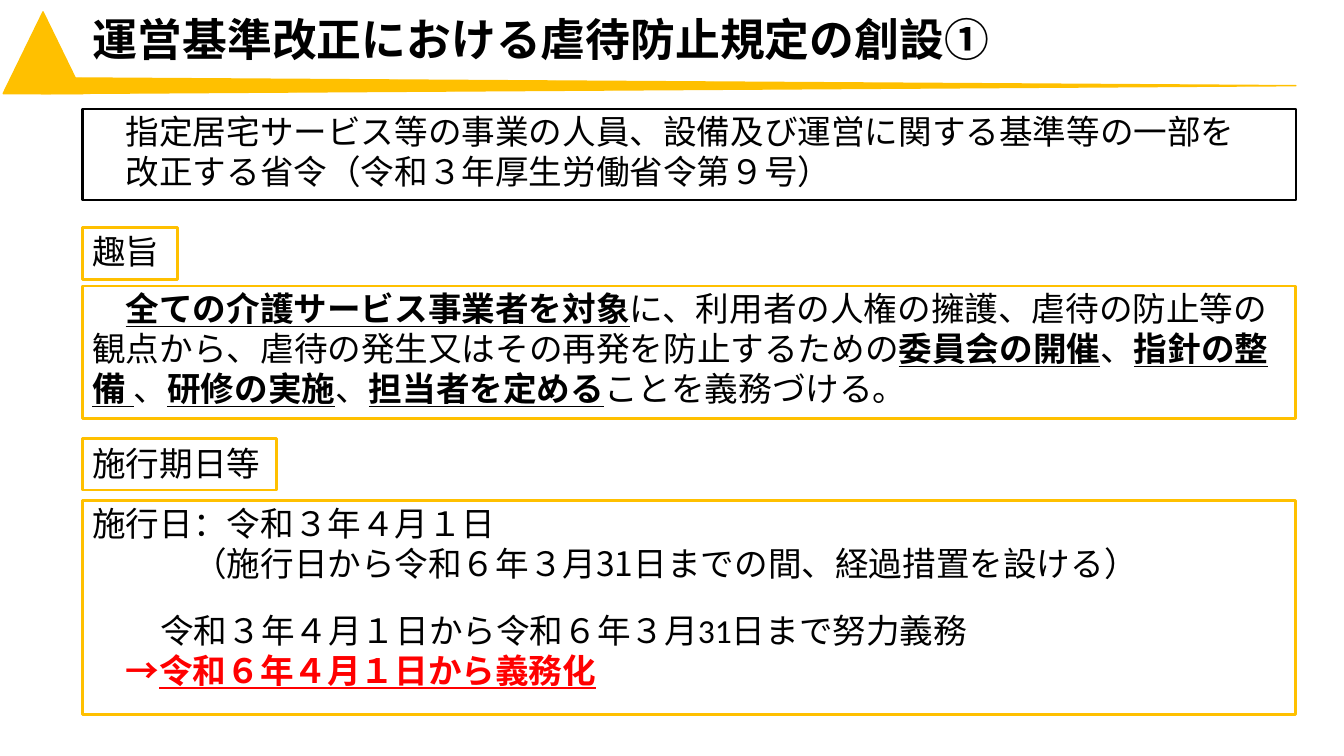
from lxml import etree
from pptx import Presentation
from pptx import util as u
from pptx.dml.color import RGBColor
from pptx.enum import shapes, text
from pptx.oxml import ns

BLACK = RGBColor(0x00, 0x00, 0x00)
RED = RGBColor(0xFF, 0x00, 0x00)
GOLD = RGBColor(0xFF, 0xC0, 0x00)
JAPANESE, LATIN = "Noto Sans CJK JP", "Calibri"

PLAIN = {}
BOLD = {"bold": True}
KEY = {"bold": True, "underline": True}
ARROW = {"bold": True, "color": RED, "font": LATIN}
DUTY = {"bold": True, "underline": True, "color": RED}

BOX_LEFT, BOX_WIDTH = 2.08, 30.58

# paragraph: (left indent cm, first-line indent cm, space before pt, runs)
TITLE = [(0.03, 0, 2, [("運営基準改正における虐待防止規定の創設①", BOLD)])]
ORDINANCE = [
    (1.09, 0, 2, [("指定居宅サービス等の事業の人員、設備及び運営に関する基準等の一部を", PLAIN)]),
    (1.09, 0, 0, [("改正する省令（令和３年厚生労働省令第９号）", PLAIN)]),
]
PURPOSE = [(0.25, 0.84, 2, [
    ("全ての介護サービス事業者を対象", KEY),
    ("に、利用者の人権の擁護、虐待の防止等の 観点から、虐待の発生又はその再発を防止するための", PLAIN),
    ("委員会の開催", KEY), ("、", PLAIN),
    ("指針の整備 ", KEY), ("、", PLAIN),
    ("研修の実施", KEY), ("、", PLAIN),
    ("担当者を定める", KEY), ("ことを義務づける。", PLAIN),
])]
SCHEDULE = [
    (0.25, 0, 2, [("施行日：令和３年４月１日", PLAIN)]),
    (2.79, 0, 0, [("（施行日から令和６年３月31日までの間、経過措置を設ける）", PLAIN)]),
    (1.96, 0, 19.3, [("令和３年４月１日から令和６年３月", PLAIN), ("31", {"font": LATIN}),
                     ("日まで努力義務", PLAIN)]),
    (1.09, 0, 0, [("→", ARROW), ("令和６年４月１日から義務化", DUTY)]),
]
PURPOSE_LABEL = [(0.25, 0, 2.5, [("趣旨", PLAIN)])]
SCHEDULE_LABEL = [(0.25, 0, 4.3, [("施行期日等", PLAIN)])]

# box: (top cm, width cm, height cm, line colour, line pt, top inset cm, paragraphs)
BOXES = [
    (2.74, BOX_WIDTH, 2.31, BLACK, 1.5, 0.05, ORDINANCE),
    (5.74, 2.39, 1.3, GOLD, 2, 0.08, PURPOSE_LABEL),
    (7.21, BOX_WIDTH, 3.33, GOLD, 2, 0.05, PURPOSE),
    (11.05, 4.9, 1.3, GOLD, 2, 0.12, SCHEDULE_LABEL),
    (12.62, BOX_WIDTH, 5.38, GOLD, 2, 0.05, SCHEDULE),
]
WEDGE = [(1.04, 1.96), (32.66, 2.16), (1.04, 2.36)]


def add_run(paragraph, wording, style, size):
    run = paragraph.add_run()
    run.text = wording
    font = run.font
    font.size = u.Pt(size)
    font.bold = style.get("bold", False)
    font.underline = style.get("underline", False)
    font.color.rgb = style.get("color", BLACK)
    font.name = style.get("font", JAPANESE)
    east_asian = etree.SubElement(run._r.get_or_add_rPr(), ns.qn("a:ea"))
    east_asian.set("typeface", JAPANESE)


def write(shape, paragraphs, size, line_height, top_inset):
    frame = shape.text_frame
    frame.word_wrap = True
    frame.vertical_anchor = text.MSO_ANCHOR.TOP
    frame.margin_left = frame.margin_right = frame.margin_bottom = 0
    frame.margin_top = u.Cm(top_inset)
    for index, (left, first_line, before, runs) in enumerate(paragraphs):
        paragraph = frame.add_paragraph() if index else frame.paragraphs[0]
        paragraph.alignment = text.PP_ALIGN.LEFT
        paragraph.line_spacing = u.Pt(line_height)
        paragraph.space_before = u.Pt(before)
        properties = paragraph._p.get_or_add_pPr()
        properties.set("marL", str(u.Cm(left)))
        properties.set("indent", str(u.Cm(first_line)))
        for wording, style in runs:
            add_run(paragraph, wording, style, size)


def outline(shape, color, width):
    shape.shadow.inherit = False
    shape.line.color.rgb = color
    shape.line.width = u.Pt(width)


def add_title(slide):
    start, *others = [(u.Cm(x), u.Cm(y)) for x, y in WEDGE]
    builder = slide.shapes.build_freeform(*start)
    builder.add_line_segments(others, close=True)
    triangle = slide.shapes.add_shape(
        shapes.MSO_SHAPE.ISOSCELES_TRIANGLE, u.Cm(0.08), u.Cm(0.3), u.Cm(2.01), u.Cm(2.06))
    for ornament in (builder.convert_to_shape(), triangle):
        outline(ornament, GOLD, 1)
        ornament.fill.solid()
        ornament.fill.fore_color.rgb = GOLD
    title = slide.shapes.add_textbox(u.Cm(2.31), u.Cm(0.2), u.Cm(24), u.Cm(1.42))
    write(title, TITLE, 32, 40, 0.03)


def main():
    presentation = Presentation()
    presentation.slide_width, presentation.slide_height = u.Cm(33.87), u.Cm(19.05)
    slide = presentation.slides.add_slide(presentation.slide_layouts[6])
    add_title(slide)
    for top, width, height, color, line_width, inset, paragraphs in BOXES:
        box = slide.shapes.add_shape(
            shapes.MSO_SHAPE.RECTANGLE, u.Cm(BOX_LEFT), u.Cm(top), u.Cm(width), u.Cm(height))
        box.fill.background()
        outline(box, color, line_width)
        write(box, paragraphs, 24, 28.6, inset)
    presentation.save("out.pptx")


if __name__ == "__main__":
    main()
